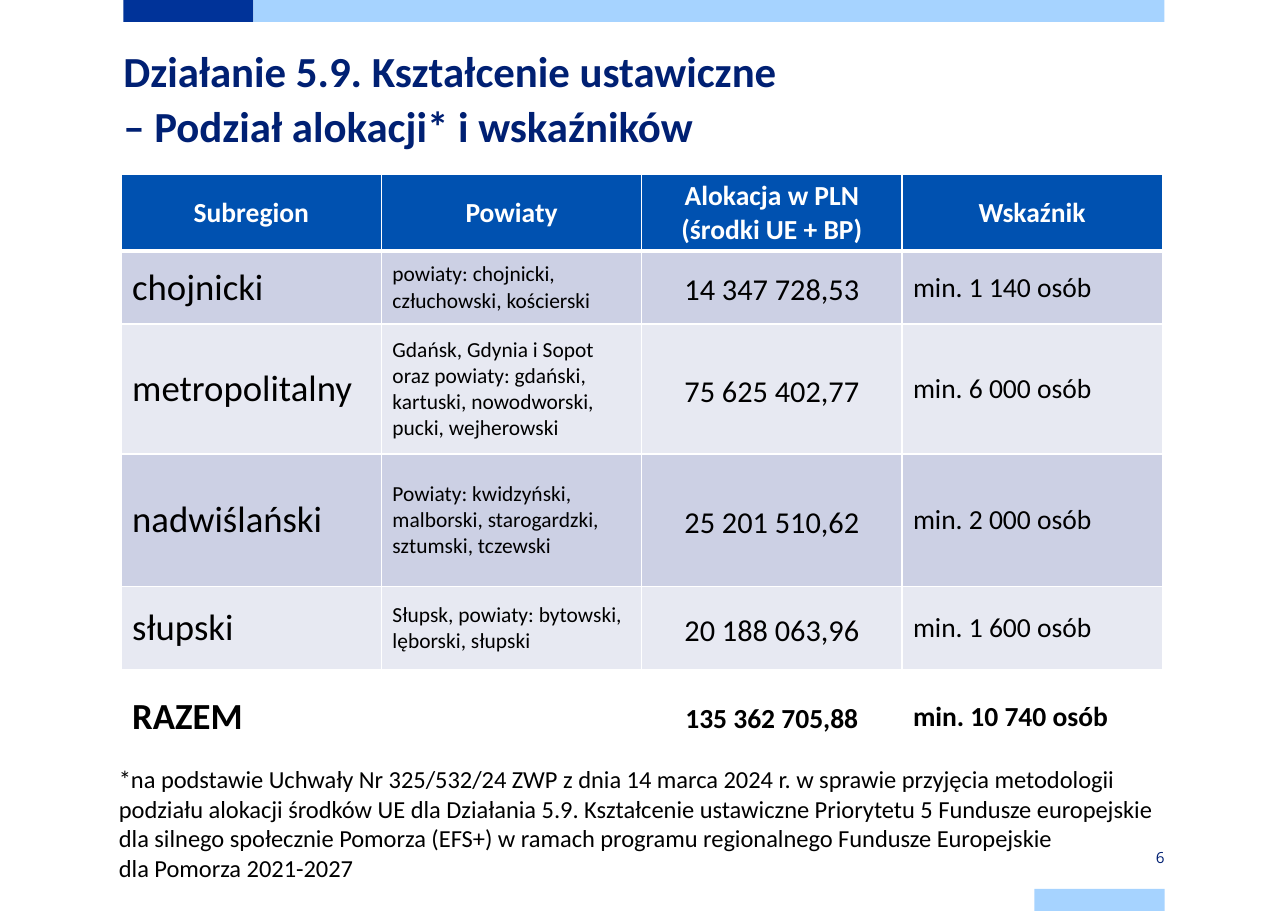
from dataclasses import dataclass

from lxml.etree import SubElement
from pptx import Presentation
from pptx.dml.color import RGBColor
from pptx.enum.shapes import MSO_SHAPE
from pptx.enum.text import MSO_ANCHOR, MSO_AUTO_SIZE, PP_ALIGN
from pptx.oxml.ns import qn
from pptx.util import Pt


@dataclass(frozen=True)
class Theme:
    """Fonts, type sizes in points and colours of the slide."""
    font: str = "Calibri"
    number_font: str = "Open Sans"
    title_size: float = 28
    region_size: float = 24
    amount_size: float = 19.8
    table_size: float = 18
    note_size: float = 16
    county_size: float = 14
    number_size: float = 10
    navy: str = "002073"
    dark_bar: str = "003399"
    light_bar: str = "A6D3FF"
    header: str = "0051B0"
    bands: tuple = ("CCD0E4", "E7E9F2")
    white: str = "FFFFFF"
    black: str = "000000"


THEME = Theme()
LEFT, WIDTH, BAR_WIDTH, BAR_HEIGHT = 80.6, 680.4, 85, 14.4
SLIDE_WIDTH, SLIDE_HEIGHT = 841.7, 595.4
RIGHT_BAR = LEFT + WIDTH - BAR_WIDTH

TITLE = "Działanie 5.9. Kształcenie ustawiczne\n– Podział alokacji* i wskaźników"
NOTE = (
    "*na podstawie Uchwały Nr 325/532/24 ZWP z dnia 14 marca 2024 r. w sprawie przyjęcia "
    "metodologii podziału alokacji środków UE dla Działania 5.9. Kształcenie ustawiczne "
    "Priorytetu 5 Fundusze europejskie dla silnego społecznie Pomorza (EFS+) w ramach "
    "programu regionalnego Fundusze Europejskie\ndla Pomorza 2021-2027"
)
HEADER = ("Subregion", "Powiaty", "Alokacja w PLN\n(środki UE + BP)", "Wskaźnik")
SUBREGIONS = (
    ("chojnicki", "powiaty: chojnicki, człuchowski, kościerski",
     "14 347 728,53", "min. 1 140 osób"),
    ("metropolitalny",
     "Gdańsk, Gdynia i Sopot oraz powiaty: gdański, kartuski, nowodworski, pucki, wejherowski",
     "75 625 402,77", "min. 6 000 osób"),
    ("nadwiślański", "Powiaty: kwidzyński, malborski, starogardzki, sztumski, tczewski",
     "25 201 510,62", "min. 2 000 osób"),
    ("słupski", "Słupsk, powiaty: bytowski, lęborski, słupski",
     "20 188 063,96", "min. 1 600 osób"),
)
TOTAL = ("RAZEM", "", "135 362 705,88", "min. 10 740 osób")
ROW_HEIGHTS = (46.8, 47.5, 85, 86.4, 54.7, 61.2)
AMOUNT = 2


def add_text(p, text, size, color, bold=False, font=THEME.font):
    """Add runs to a paragraph, with a line break at each newline."""
    for i, line in enumerate(text.split("\n")):
        if i:
            p.add_line_break()
        r = p.add_run()
        r.text = line
        r.font.name, r.font.size, r.font.bold = font, Pt(size), bold
        r.font.color.rgb = RGBColor.from_string(color)


def add_bar(slide, x, y, width, color):
    """Add a flat decorative bar at the slide's edge."""
    sp = slide.shapes.add_shape(MSO_SHAPE.RECTANGLE, Pt(x), Pt(y), Pt(width), Pt(BAR_HEIGHT))
    sp.shadow.inherit = False
    sp.fill.solid()
    sp.fill.fore_color.rgb = RGBColor.from_string(color)
    sp.line.fill.background()


def add_title(slide):
    """Place and fill the title placeholder."""
    sp = slide.shapes.title
    sp.left, sp.top, sp.width, sp.height = Pt(LEFT), Pt(26.6), Pt(WIDTH), Pt(85)
    tf = sp.text_frame
    tf.auto_size, tf.vertical_anchor = MSO_AUTO_SIZE.NONE, MSO_ANCHOR.TOP
    tf.margin_left = tf.margin_top = tf.margin_right = tf.margin_bottom = 0
    p = tf.paragraphs[0]
    p.alignment, p.line_spacing = PP_ALIGN.LEFT, Pt(36)
    add_text(p, TITLE, THEME.title_size, THEME.navy, bold=True)


def add_box(slide, x, y, width, height):
    """Add a wrapping text box and return its text frame."""
    tf = slide.shapes.add_textbox(Pt(x), Pt(y), Pt(width), Pt(height)).text_frame
    tf.word_wrap = True
    return tf


def set_borders(cell, bottom):
    """Draw white borders around a cell."""
    for side, width in (("L", 1), ("R", 1), ("T", 1), ("B", bottom)):
        ln = SubElement(cell._tc.get_or_add_tcPr(), qn(f"a:ln{side}"), w=str(Pt(width)))
        SubElement(SubElement(ln, qn("a:solidFill")), qn("a:srgbClr"), val=THEME.white)


def fill_cell(cell, text, size, color, fill=None, bold=False, align=PP_ALIGN.LEFT,
              spacing=None, bottom=1):
    """Format one table cell and write a paragraph per line."""
    set_borders(cell, bottom)
    if fill:
        cell.fill.solid()
        cell.fill.fore_color.rgb = RGBColor.from_string(fill)
    else:
        cell.fill.background()
    cell.vertical_anchor = MSO_ANCHOR.MIDDLE
    if spacing:
        cell.margin_left = cell.margin_right = Pt(5)
        cell.margin_top = cell.margin_bottom = 0
    tf = cell.text_frame
    for i, line in enumerate(text.split("\n") if text else ()):
        p = tf.add_paragraph() if i else tf.paragraphs[0]
        p.alignment = align
        if spacing:
            p.line_spacing = spacing
        add_text(p, line, size, color, bold)


def add_allocation_table(slide):
    """Add the table of allocations by subregion."""
    table = slide.shapes.add_table(len(ROW_HEIGHTS), len(HEADER), Pt(79.2), Pt(113.8),
                                   Pt(WIDTH), Pt(sum(ROW_HEIGHTS))).table
    table.horz_banding = False
    for row, height in zip(table.rows, ROW_HEIGHTS):
        row.height = Pt(height)
    for c, text in enumerate(HEADER):
        fill_cell(table.cell(0, c), text, THEME.table_size, THEME.white, THEME.header,
                  bold=True, align=PP_ALIGN.CENTER, bottom=3)
    sizes = (THEME.region_size, THEME.county_size, THEME.amount_size, THEME.table_size)
    total_sizes = (THEME.region_size,) + (THEME.table_size,) * 3
    for n, values in enumerate(SUBREGIONS + (TOTAL,)):
        is_total = values is TOTAL
        fill = None if is_total else THEME.bands[n % 2]
        for c, text in enumerate(values):
            size = (total_sizes if is_total else sizes)[c]
            fill_cell(table.cell(n + 1, c), text, size, THEME.black, fill, bold=is_total,
                      align=PP_ALIGN.CENTER if c == AMOUNT else PP_ALIGN.LEFT,
                      spacing=1.15 if c == AMOUNT else None)


def add_note(slide):
    """Add the footnote under the table."""
    tf = add_box(slide, 70.6, 496.1, 696.2, 85)
    add_text(tf.paragraphs[0], NOTE, THEME.note_size, THEME.black)


def add_page_number(slide):
    """Add the page number above the bottom bar."""
    tf = add_box(slide, RIGHT_BAR, 553, BAR_WIDTH, BAR_HEIGHT)
    tf.vertical_anchor = MSO_ANCHOR.MIDDLE
    tf.margin_left = tf.margin_right = 0
    tf.margin_top = tf.margin_bottom = Pt(5.8)
    p = tf.paragraphs[0]
    p.alignment = PP_ALIGN.RIGHT
    add_text(p, "6", THEME.number_size, THEME.navy, font=THEME.number_font)


def main():
    """Build and save the slide."""
    prs = Presentation()
    prs.slide_width, prs.slide_height = Pt(SLIDE_WIDTH), Pt(SLIDE_HEIGHT)
    slide = prs.slides.add_slide(prs.slide_layouts[5])
    add_bar(slide, LEFT, 0, BAR_WIDTH, THEME.dark_bar)
    add_bar(slide, LEFT + BAR_WIDTH, 0, WIDTH - BAR_WIDTH, THEME.light_bar)
    add_bar(slide, RIGHT_BAR, SLIDE_HEIGHT - BAR_HEIGHT, BAR_WIDTH, THEME.light_bar)
    add_title(slide)
    add_note(slide)
    add_allocation_table(slide)
    add_page_number(slide)
    prs.save("out.pptx")


if __name__ == "__main__":
    main()
